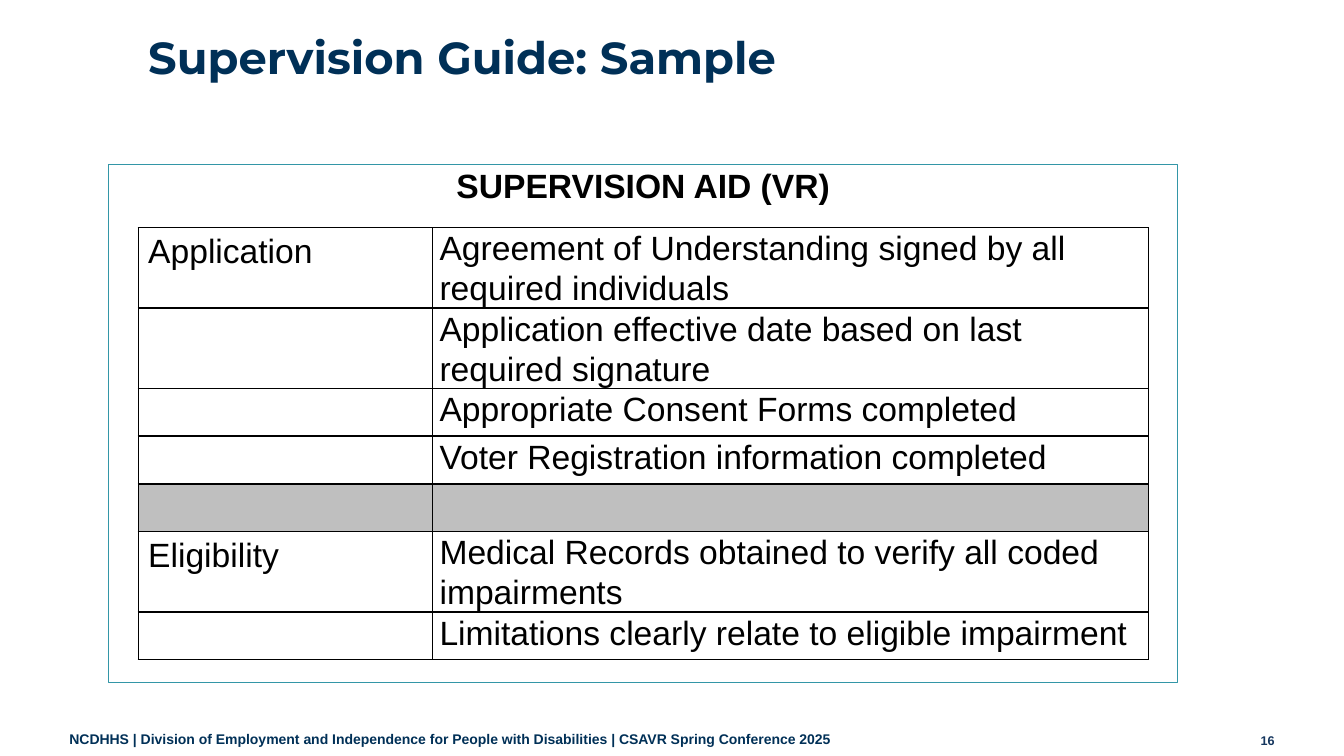
from lxml.etree import SubElement
from pptx import Presentation
from pptx.dml.color import RGBColor
from pptx.enum.text import MSO_ANCHOR, MSO_AUTO_SIZE, PP_ALIGN
from pptx.oxml.ns import qn
from pptx.util import Inches, Pt

NAVY = "003057"
ROWS = [
    ("Application", "Agreement of Understanding signed by all required individuals", 0.79),
    ("", "Application effective date based on last required signature", 0.79),
    ("", "Appropriate Consent Forms completed", 0.475),
    ("", "Voter Registration information completed", 0.475),
    ("", "", 0.475),
    ("Eligibility", "Medical Records obtained to verify all coded impairments", 0.79),
    ("", "Limitations clearly relate to eligible impairment", 0.475),
]


def rgb(value):
    return RGBColor.from_string(value)


def write(tf, text, size=24, color="000000", font="Arial", bold=False,
          align=PP_ALIGN.LEFT, spacing=1.0, after=0):
    p = tf.paragraphs[0]
    p.alignment, p.line_spacing = align, spacing
    p.space_before, p.space_after = Pt(0), Pt(after)
    r = p.add_run()
    r.text = text
    r.font.name, r.font.size, r.font.bold = font, Pt(size), bold
    r.font.color.rgb = rgb(color)
    return p


class SlideBuilder:
    def __init__(self, prs):
        self.s = prs.slides.add_slide(prs.slide_layouts[1])

    def place(self, sp, box):
        sp.left, sp.top, sp.width, sp.height = map(Inches, box)
        sp.text_frame.word_wrap = True
        sp.text_frame.auto_size = MSO_AUTO_SIZE.NONE
        return sp.text_frame

    def title(self, text, box):
        tf = self.place(self.s.shapes.title, box)
        tf.vertical_anchor = MSO_ANCHOR.MIDDLE
        write(tf, text, size=32, color=NAVY, font="Montserrat", bold=True, spacing=0.9)

    def body(self, text, box):
        sp = self.s.placeholders[1]
        tf = self.place(sp, box)
        sp.fill.solid()
        sp.fill.fore_color.rgb = rgb("FFFFFF")
        sp.line.color.rgb = rgb("3396A7")
        sp.line.width = Pt(0.75)
        p = write(tf, text, bold=True, align=PP_ALIGN.CENTER, spacing=0.9)
        pPr = p._p.get_or_add_pPr()
        pPr.set("marL", "0")
        pPr.set("indent", "0")
        SubElement(pPr, qn("a:buNone"))

    def label(self, text, box, **style):
        sp = self.s.shapes.add_textbox(*map(Inches, box))
        write(self.place(sp, box), text, bold=True, **style)

    def border(self, cell):
        tcPr = cell._tc.get_or_add_tcPr()
        for side in ("a:lnL", "a:lnR", "a:lnT", "a:lnB"):
            ln = SubElement(tcPr, qn(side), w=str(Pt(1)))
            fill = SubElement(ln, qn("a:solidFill"))
            SubElement(fill, qn("a:srgbClr"), val="000000")

    def table(self, rows, left, top, widths):
        height = sum(row[2] for row in rows)
        frame = self.s.shapes.add_table(len(rows), len(widths), Inches(left), Inches(top),
                                        Inches(sum(widths)), Inches(height))
        table = frame.table
        table.first_row = table.horz_banding = False
        for column, width in zip(table.columns, widths):
            column.width = Inches(width)
        for i, (stage, check, row_height) in enumerate(rows):
            table.rows[i].height = Inches(row_height)
            for j, text in enumerate((stage, check)):
                cell = table.cell(i, j)
                self.border(cell)
                if check:
                    cell.fill.background()
                else:
                    cell.fill.solid()
                    cell.fill.fore_color.rgb = rgb("BFBFBF")
                if j == 1:
                    cell.margin_left = cell.margin_right = Inches(0.07)
                    cell.margin_top = cell.margin_bottom = 0
                if text:
                    write(cell.text_frame, text, spacing=(1.0, 1.07)[j], after=(0, 8)[j])


def main():
    prs = Presentation()
    prs.slide_width, prs.slide_height = Inches(13.33), Inches(7.5)
    slide = SlideBuilder(prs)
    slide.title("Supervision Guide: Sample", (1.37, 0.32, 10.88, 0.55))
    slide.body("SUPERVISION AID (VR)", (1.08, 1.63, 10.6, 5.14))
    slide.table(ROWS, 1.37, 2.26, (2.92, 7.1))
    slide.label("NCDHHS | Division of Employment and Independence for People with Disabilities"
                " | CSAVR Spring Conference 2025", (0.59, 7.2, 11.77, 0.29), size=10, color=NAVY)
    slide.label("16", (12.15, 7.22, 0.59, 0.3), size=9, color="15365E", align=PP_ALIGN.RIGHT)
    prs.save("out.pptx")


if __name__ == "__main__":
    main()
